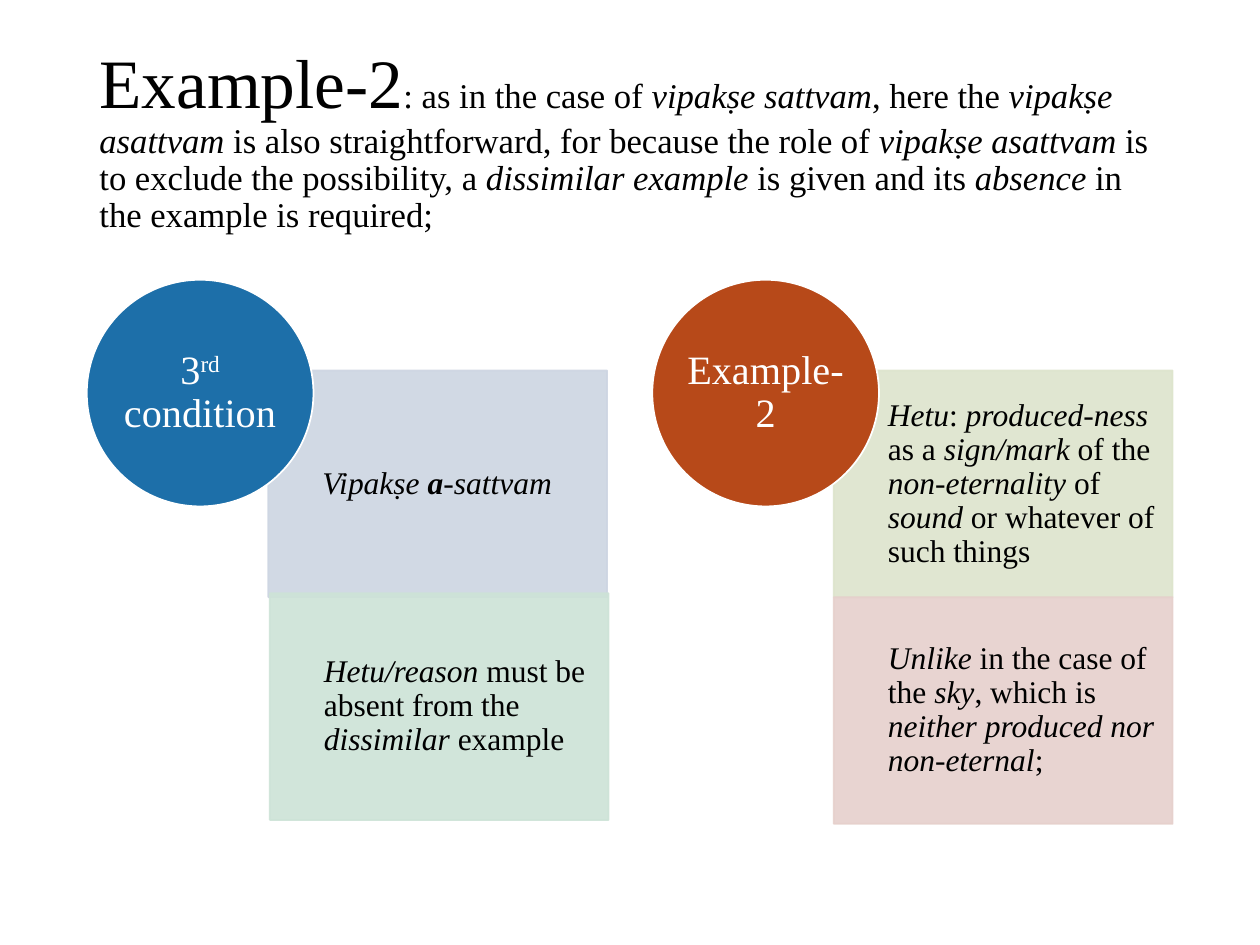
from lxml import etree
from pptx import Presentation, util as u
from pptx.dml.color import RGBColor
from pptx.enum import shapes, text
from pptx.oxml.ns import qn

BLACK = RGBColor(0x00, 0x00, 0x00)
WHITE = RGBColor(0xFF, 0xFF, 0xFF)
BLUE = RGBColor(0x1D, 0x6F, 0xA9)
ORANGE = RGBColor(0xB7, 0x49, 0x19)
PALE_BLUE = RGBColor(0xCD, 0xD5, 0xE2)
PALE_GREEN = RGBColor(0xCD, 0xE3, 0xD7)
PALE_OLIVE = RGBColor(0xDD, 0xE4, 0xCC)
PALE_RED = RGBColor(0xE6, 0xD0, 0xCC)

FONT = "Times New Roman"
MARGIN, PITCH = 1.75, 11.4          # first column and distance to the next
DISC_TOP, SIDE = 5.64, 4.57         # disc diameter is also the panel height
PANEL_SHIFT, PANEL_WIDTH = 3.66, 6.83
PANEL_INDENT, DISC_INDENT = 1.09, 0.67

# Run styles
ITALIC = {"italic": True}
BOLD_ITALIC = {"italic": True, "bold": True}

HEADING = [
    ("Example-2", {"size": u.Pt(39.6)}), (": as in the case of ", {}),
    ("vipakṣe sattvam", ITALIC), (", here the ", {}),
    ("vipakṣe asattvam", ITALIC),
    (" is also straightforward, for because the role of ", {}),
    ("vipakṣe asattvam", ITALIC), (" is to exclude the possibility, a ", {}),
    ("dissimilar example", ITALIC), (" is given and its ", {}),
    ("absence", ITALIC), (" in the example is required;", {}),
]

# Each column: disc colour, disc label, panels as (left shift, top, colour, runs)
COLUMNS = [
    (BLUE, [("3", {}), ("rd", {"baseline": 30000}), (" condition", {})], [
        (0, 7.47, PALE_BLUE, [
            ("Vipakṣe ", ITALIC), ("a", BOLD_ITALIC), ("-sattvam", ITALIC)]),
        (0.03, 11.96, PALE_GREEN, [
            ("Hetu/reason", ITALIC), (" must be absent from the ", {}),
            ("dissimilar", ITALIC), (" example", {})]),
    ]),
    (ORANGE, [("Example-2", {})], [
        (0, 7.47, PALE_OLIVE, [
            ("Hetu", ITALIC), (": ", {}), ("produced-ness", ITALIC),
            (" as a ", {}), ("sign/mark", ITALIC), (" of the ", {}),
            ("non-eternality", ITALIC), (" of ", {}), ("sound", ITALIC),
            (" or whatever of such things", {})]),
        (0, 12.04, PALE_RED, [
            ("Unlike", ITALIC), (" in the case of the ", {}), ("sky", ITALIC),
            (", which is ", {}), ("neither produced nor non-eternal", ITALIC),
            (";", {})]),
    ]),
]


def apply_format(target, values):
    for name, value in values.items():
        setattr(target, name, value)


def write_runs(frame, runs, size, color, align=text.PP_ALIGN.LEFT):
    """Fill a text frame with one paragraph of styled runs."""
    apply_format(frame, {"word_wrap": True,
                         "auto_size": text.MSO_AUTO_SIZE.NONE,
                         "vertical_anchor": text.MSO_ANCHOR.MIDDLE})
    paragraph = frame.paragraphs[0]
    apply_format(paragraph, {"alignment": align, "line_spacing": 0.9})
    for words, style in runs:
        run = paragraph.add_run()
        run.text = words
        values = {"name": FONT, "size": u.Pt(size), **style}
        baseline = values.pop("baseline", None)
        apply_format(run.font, values)
        run.font.color.rgb = color
        if baseline:
            run.font._element.set("baseline", str(baseline))


def add_solid(slide, kind, box, fill, line, opacity=None):
    """Add a plain filled shape, optionally see-through."""
    solid = slide.shapes.add_shape(kind, *map(u.Cm, box))
    solid.shadow.inherit = False
    solid.fill.solid()
    solid.fill.fore_color.rgb = fill
    solid.line.color.rgb = line
    solid.line.width = u.Pt(1)
    if opacity:
        for color in solid._element.spPr.iter(qn("a:srgbClr")):
            etree.SubElement(color, qn("a:alpha"), val=str(opacity * 1000))


def add_label(slide, box, insets, *content):
    """Add a text box; insets are left, top, right, bottom."""
    frame = slide.shapes.add_textbox(*map(u.Cm, box)).text_frame
    sides = ("margin_left", "margin_top", "margin_right", "margin_bottom")
    apply_format(frame, dict(zip(sides, map(u.Cm, insets))))
    write_runs(frame, *content)


def add_panel(slide, left, top, color, runs):
    add_solid(slide, shapes.MSO_SHAPE.RECTANGLE,
              (left, top, PANEL_WIDTH, SIDE), color, color, opacity=90)
    add_label(slide,
              (left + PANEL_INDENT, top, PANEL_WIDTH - PANEL_INDENT, SIDE),
              (0, 0.36, 0.36, 0.36), runs, 18, BLACK)


def add_disc(slide, left, color, runs):
    add_solid(slide, shapes.MSO_SHAPE.OVAL,
              (left, DISC_TOP, SIDE, SIDE), color, WHITE)
    inner = SIDE - 2 * DISC_INDENT
    add_label(slide,
              (left + DISC_INDENT, DISC_TOP + DISC_INDENT, inner, inner),
              (0, 0, 0, 0), runs, 23, WHITE, text.PP_ALIGN.CENTER)


def main():
    deck = Presentation()
    apply_format(deck, {"slide_width": u.Cm(25.4), "slide_height": u.Cm(19.05)})
    slide = deck.slides.add_slide(deck.slide_layouts[5])

    # Heading
    heading = slide.shapes.title
    apply_format(heading, {"left": u.Cm(MARGIN), "top": u.Cm(1.02),
                           "width": u.Cm(21.9), "height": u.Cm(3.68)})
    write_runs(heading.text_frame, HEADING, 19.8, BLACK)

    # Condition and example columns, discs over their panels
    for index, (disc_color, disc_runs, panels) in enumerate(COLUMNS):
        left = MARGIN + index * PITCH
        for shift, top, color, runs in panels:
            add_panel(slide, left + PANEL_SHIFT + shift, top, color, runs)
        add_disc(slide, left, disc_color, disc_runs)

    deck.save("out.pptx")


if __name__ == "__main__":
    main()
